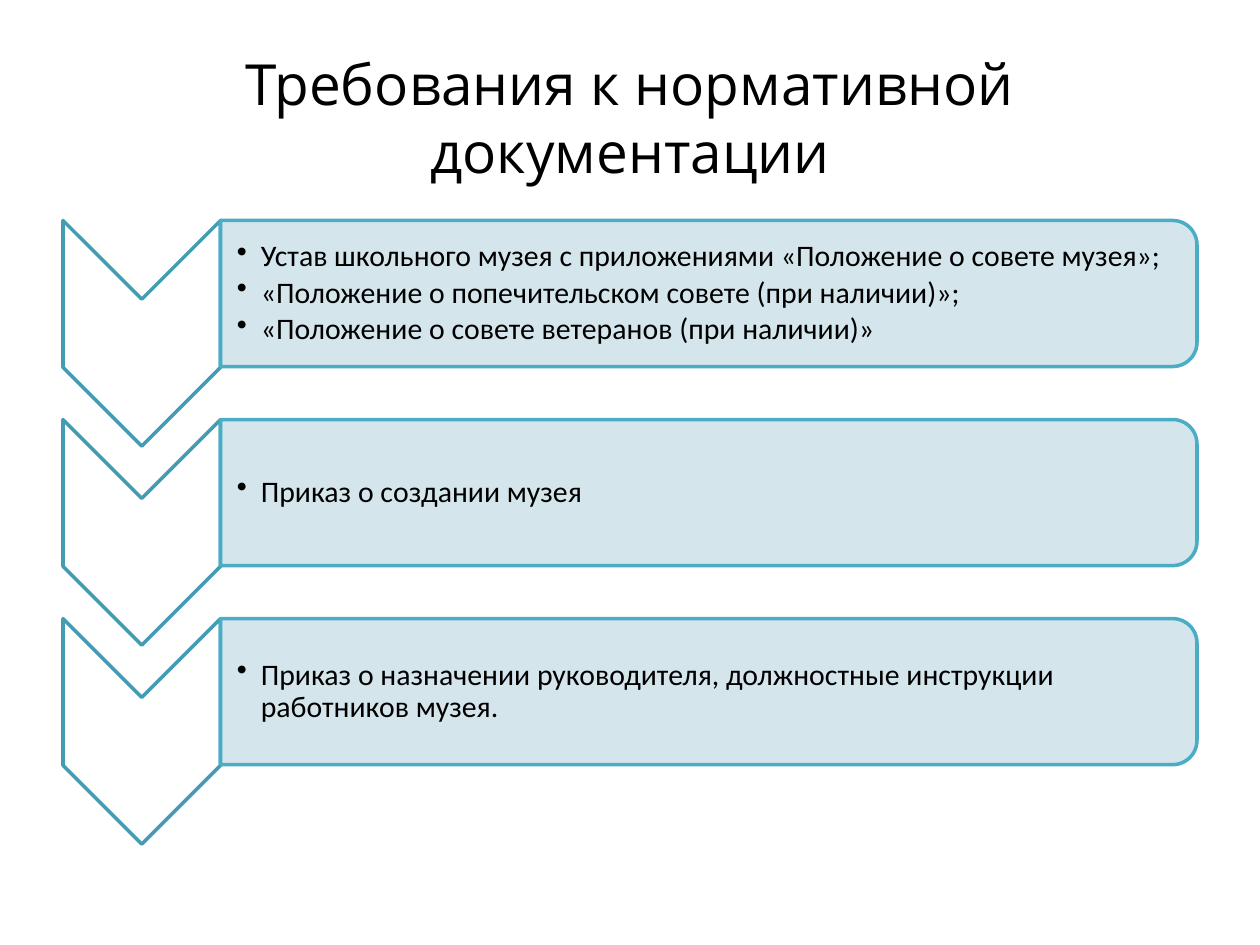
from lxml import etree
from pptx import Presentation
from pptx import util as u
from pptx.dml.color import RGBColor
from pptx.enum import shapes, text
from pptx.oxml.ns import qn

TITLE = "Требования к нормативной документации"
ROWS = [
    ["Устав школьного музея с приложениями «Положение о совете музея»;",
     "«Положение о попечительском совете (при наличии)»;",
     "«Положение о совете ветеранов (при наличии)»"],
    ["Приказ о создании музея"],
    ["Приказ о назначении руководителя, должностные инструкции работников музея."],
]

# Grid, in inches: a chevron column, then a bar column
W, H = 10, 7.5
MARGIN = 0.5
TOP, PITCH = 1.75, 1.58
CHEVRON_W, CHEVRON_H = 1.25, 1.79
BAR_W, BAR_H = 7.75, 1.16
BAR_X = MARGIN + CHEVRON_W
TEXT_W, TEXT_H = 7.69, 1.05


def rgb(value):
    return RGBColor.from_string(value)


def add_turned(slide, kind, x, y, w, h, fill, line):
    """Add a shape turned a quarter right that covers x, y, w, h."""
    left, top = x + (w - h) / 2, y + (h - w) / 2
    sp = slide.shapes.add_shape(kind, *map(u.Inches, (left, top, h, w)))
    sp.rotation = 90
    sp.shadow.inherit = False
    sp.fill.solid()
    sp.fill.fore_color.rgb = rgb(fill)
    sp.line.color.rgb = rgb(line)
    sp.line.width = u.Pt(2)
    return sp


def add_text(slide, x, y, w, h, lines, font, size, insets):
    sp = slide.shapes.add_textbox(*map(u.Inches, (x, y, w, h)))
    tf = sp.text_frame
    tf.word_wrap = True
    tf.vertical_anchor = text.MSO_ANCHOR.MIDDLE
    tf.margin_left, tf.margin_top, tf.margin_right, tf.margin_bottom = map(u.Inches, insets)
    tf.text = "\n".join(lines)
    for p in tf.paragraphs:
        for r in p.runs:
            r.font.name = font
            r.font.size = u.Pt(size)
            r.font.color.rgb = rgb("000000")
    return tf


def add_bullet(p, indent):
    pPr = p._p.get_or_add_pPr()
    pPr.set("marL", str(u.Inches(indent)))
    pPr.set("indent", str(u.Inches(-indent)))
    etree.SubElement(pPr, qn("a:buChar")).set("char", "•")


prs = Presentation()
prs.slide_width, prs.slide_height = u.Inches(W), u.Inches(H)
slide = prs.slides.add_slide(prs.slide_layouts[6])

# Title
tf = add_text(slide, MARGIN, 0.3, W - 2 * MARGIN, 1.25, [TITLE], "Open Sans", 32.4,
              (0.1, 0.05, 0.1, 0.05))
tf.paragraphs[0].alignment = text.PP_ALIGN.CENTER

for i, lines in enumerate(ROWS):
    y = TOP + i * PITCH

    # Chevron pointing down
    add_turned(slide, shapes.MSO_SHAPE.CHEVRON, MARGIN, y, CHEVRON_W, CHEVRON_H,
               "FFFFFF", "449CB4")

    # Bar rounded on the right, slightly transparent
    bar = add_turned(slide, shapes.MSO_SHAPE.ROUND_2_SAME_RECTANGLE, BAR_X, y, BAR_W, BAR_H,
                     "D0E3EA", "4BACC6")
    color = bar._element.spPr.find(qn("a:solidFill"))[0]
    etree.SubElement(color, qn("a:alpha")).set("val", "90000")

    # Bulleted text
    tf = add_text(slide, BAR_X, y + (BAR_H - TEXT_H) / 2, TEXT_W, TEXT_H, lines,
                  "Calibri", 17, (0.13, 0.01, 0.01, 0.01))
    for p in tf.paragraphs:
        add_bullet(p, 0.19)
        p.level = 1
        p.line_spacing = 0.9
        p.space_after = u.Pt(2.55)

prs.save("out.pptx")
